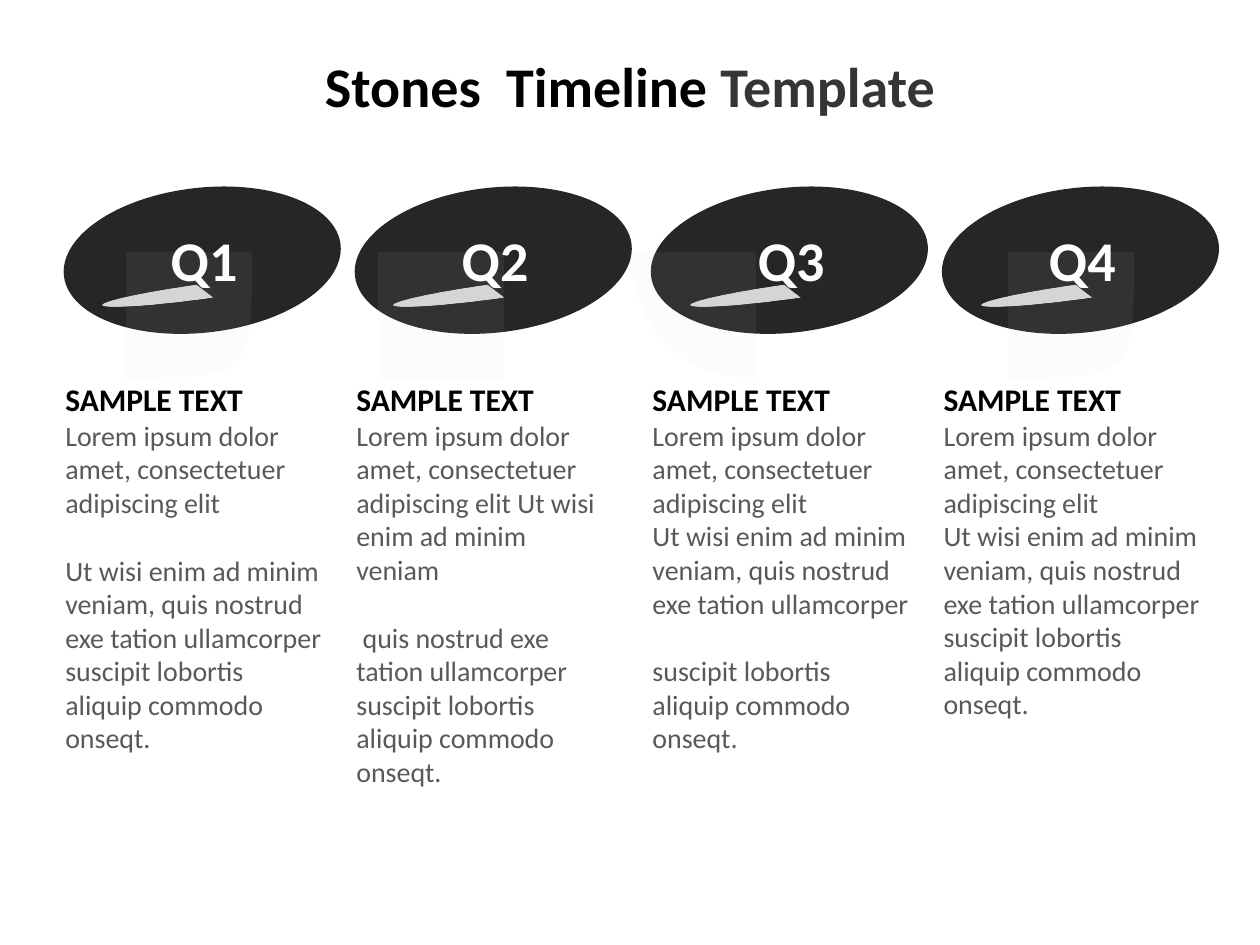
from lxml.etree import SubElement
from pptx import Presentation
from pptx.dml.color import RGBColor
from pptx.enum.shapes import MSO_SHAPE
from pptx.enum.text import MSO_ANCHOR, MSO_AUTO_SIZE, PP_ALIGN
from pptx.oxml.ns import qn
from pptx.util import Inches, Pt

TITLE = [("Stones  Timeline ", "000000"), ("Template", "353535")]
HEADING = "SAMPLE TEXT"
INTRO = "Lorem ipsum dolor amet, consectetuer adipiscing elit"
WISI = "Ut wisi enim ad minim veniam, quis nostrud exe tation ullamcorper"
END = "suscipit lobortis aliquip commodo onseqt."
# Label, left edge of the stone, body paragraphs as (text, gap above?)
QUARTERS = [
    ("Q1", 0.5, [(INTRO, False), (f"{WISI} {END}", True)]),
    ("Q2", 2.81, [(f"{INTRO} Ut wisi enim ad minim veniam", False),
                  (f" quis nostrud exe tation ullamcorper {END}", True)]),
    ("Q3", 5.16, [(INTRO, False), (WISI, False), (END, True)]),
    ("Q4", 7.47, [(INTRO, False), (f"{WISI} {END}", False)]),
]
STONE_TOP = 1.49
# Start point, then three points per Bezier curve, from the stone's top left
SHEEN = [
    (0.06, 0.73),
    (0.04, 0.54), (0.22, 0.35), (0.54, 0.24),
    (0.65, 0.20), (0.56, 0.40), (0.68, 0.38),
    (0.75, 0.37), (0.81, 0.35), (0.86, 0.40),
    (0.91, 0.44), (0.87, 0.61), (0.97, 0.65),
    (1.07, 0.68), (1.32, 0.62), (1.46, 0.60),
    (1.60, 0.58), (1.81, 0.38), (1.82, 0.53),
    (1.85, 0.71), (1.66, 0.90), (1.34, 1.01),
    (1.24, 1.05), (1.12, 1.08), (0.99, 1.09),
    (0.87, 1.11), (0.75, 1.11), (0.63, 1.10),
    (0.30, 1.06), (0.08, 0.91), (0.06, 0.73),
]
# Position, colour and opacity, all in percent
GLINT_STOPS = [(0, "D7D7D7", 100), (50, "D7D7D7", 100),
               (50, "D7D7D7", 0), (100, "979797", 1)]


def rgb(value):
    return RGBColor.from_string(value)


def style(p, size, color, bold=False):
    for r in p.runs:
        r.font.name, r.font.size, r.font.bold = "Calibri", Pt(size), bold
        r.font.color.rgb = rgb(color)


def add_text(slide, x, y, w, h, wrap=True):
    tf = slide.shapes.add_textbox(*map(Inches, (x, y, w, h))).text_frame
    tf.word_wrap = wrap
    tf.auto_size = MSO_AUTO_SIZE.SHAPE_TO_FIT_TEXT
    return tf


def finish(sp, color):
    sp.shadow.inherit = False
    sp.line.fill.background()
    sp.fill.solid()
    sp.fill.fore_color.rgb = rgb(color)


def add_ellipse(group, x, y, w, h, angle, color):
    sp = group.shapes.add_shape(MSO_SHAPE.OVAL, *map(Inches, (x, y, w, h)))
    sp.rotation = angle
    finish(sp, color)
    return sp


def add_sheen(group, left, top):
    points = [(left + x, top + y) for x, y in SHEEN]
    builder = group.shapes.build_freeform(*points[0], scale=Inches(1))
    builder.add_line_segments(points[1:], close=True)
    sp = builder.convert_to_shape()
    finish(sp, "D9D9D9")
    color = next(sp._element.spPr.iter(qn("a:srgbClr")))
    SubElement(color, qn("a:alpha"), val="7000")
    # Turn each three line segments into one Bezier curve
    lines = list(sp._element.iter(qn("a:lnTo")))
    for i in range(0, len(lines), 3):
        curve = lines[i]
        curve.tag = qn("a:cubicBezTo")
        for line in lines[i + 1:i + 3]:
            curve.append(line[0])
            line.getparent().remove(line)


def add_glint(group, left, top):
    sp = add_ellipse(group, left + 0.31, top + 0.76, 1.64, 0.12, 352.3, "D7D7D7")
    solid = sp._element.spPr.find(qn("a:solidFill"))
    grad = solid.makeelement(qn("a:gradFill"), {"rotWithShape": "1"})
    stops = SubElement(grad, qn("a:gsLst"))
    for pos, color, opacity in GLINT_STOPS:
        gs = SubElement(stops, qn("a:gs"), pos=str(pos * 1000))
        clr = SubElement(gs, qn("a:srgbClr"), val=color)
        SubElement(clr, qn("a:alpha"), val=str(opacity * 1000))
    SubElement(grad, qn("a:lin"), ang=str(315 * 60000), scaled="0")
    solid.getparent().replace(solid, grad)


def add_quarter(slide, label, left, body):
    group = slide.shapes.add_group_shape()
    add_ellipse(group, left, STONE_TOP, 2.21, 1.15, 353.5, "262626")
    add_sheen(group, left, STONE_TOP)
    add_glint(group, left, STONE_TOP)

    p = add_text(slide, left + 0.75, 1.74, 0.74, 0.64, wrap=False).paragraphs[0]
    p.text = label
    p.alignment = PP_ALIGN.CENTER
    style(p, 32, "FFFFFF", True)

    tf = add_text(slide, left - 0.08, 2.97, 2.25, 3.1)
    tf.text = HEADING
    style(tf.paragraphs[0], 18, "000000", True)
    for text, gap in body:
        p = tf.add_paragraph()
        p.text = text
        if gap:
            p.space_before = Pt(19.5)
        style(p, 16, "595959")


def add_title(slide):
    title = slide.shapes.title
    title.left, title.top, title.width, title.height = map(Inches, (1, 0.36, 8, 0.64))
    tf = title.text_frame
    tf.word_wrap = True
    tf.auto_size = MSO_AUTO_SIZE.SHAPE_TO_FIT_TEXT
    tf.vertical_anchor = MSO_ANCHOR.TOP
    p = tf.paragraphs[0]
    p.alignment = PP_ALIGN.CENTER
    for text, _ in TITLE:
        p.add_run().text = text
    style(p, 32, TITLE[0][1], True)
    p.runs[1].font.color.rgb = rgb(TITLE[1][1])


def main():
    prs = Presentation()
    prs.slide_width, prs.slide_height = Inches(10), Inches(7.5)
    slide = prs.slides.add_slide(prs.slide_layouts[5])
    add_title(slide)
    for quarter in QUARTERS:
        add_quarter(slide, *quarter)
    prs.save("out.pptx")


if __name__ == "__main__":
    main()
